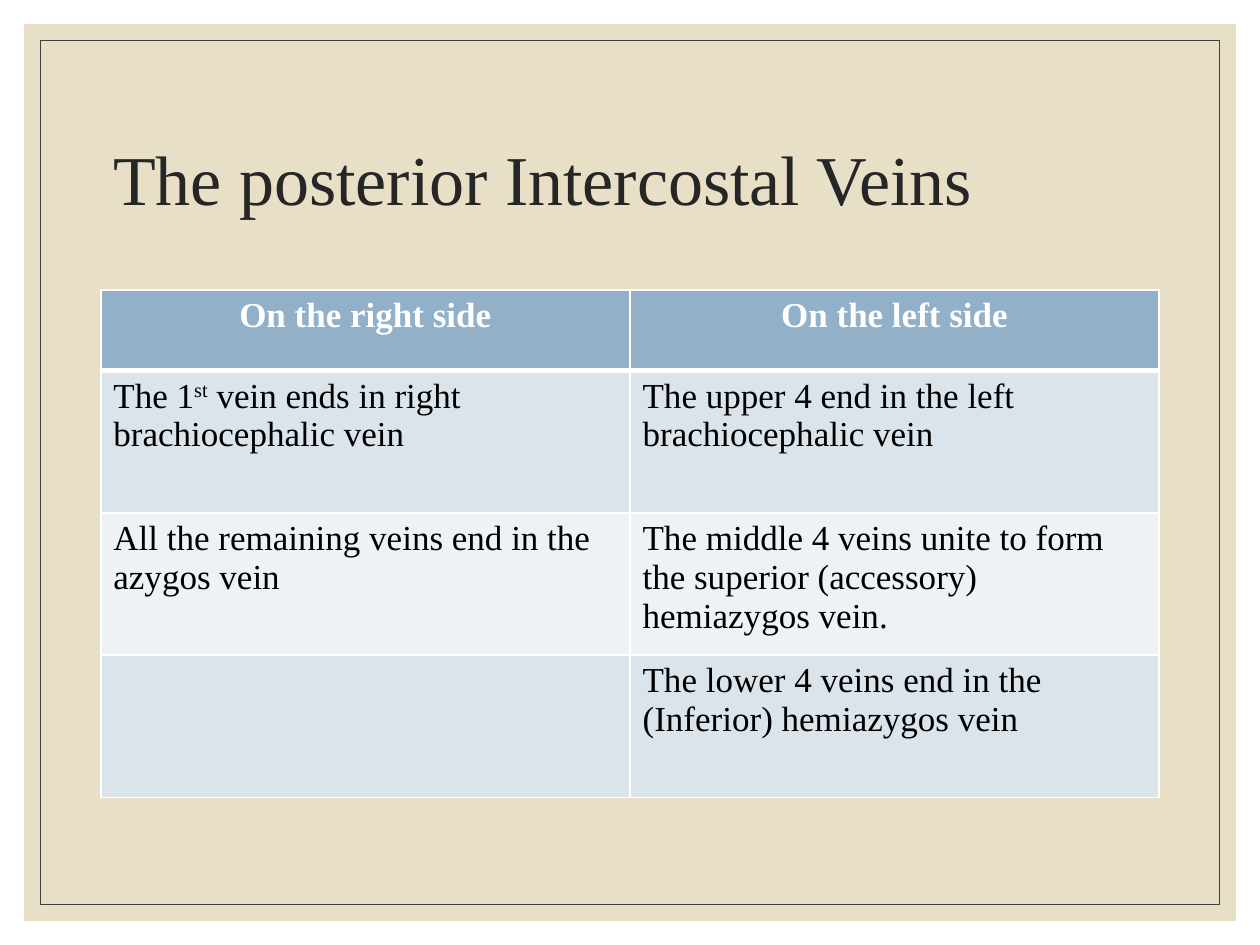
from lxml.etree import SubElement
from pptx import Presentation
from pptx.dml.color import RGBColor
from pptx.enum.shapes import MSO_SHAPE
from pptx.enum.text import MSO_ANCHOR, PP_ALIGN
from pptx.oxml.ns import qn
from pptx.util import Inches, Pt

WIDTH, HEIGHT = 10, 7.5
MARGIN = 0.08 * WIDTH
CONTENT_W = WIDTH - 2 * MARGIN
FONT = "Times New Roman"
HEADER_H, BODY_H = 0.64, 1.13
HEADER_FILL, BODY_FILLS = "92B0C8", ("DCE4EB", "EEF2F5")

# Each cell is a list of (text, is superscript) runs.
ROWS = [
    [[("On the right side", False)], [("On the left side", False)]],
    [[("The 1", False), ("st", True),
      (" vein ends in right brachiocephalic vein", False)],
     [("The upper 4 end in the left brachiocephalic vein", False)]],
    [[("All the remaining veins end in the azygos vein", False)],
     [("The middle 4 veins unite to form the superior (accessory) "
       "hemiazygos vein.", False)]],
    [[], [("The lower 4 veins end in the (Inferior) hemiazygos vein", False)]],
]


def rgb(color):
    return RGBColor.from_string(color)


def set_attrs(obj, **values):
    for name, value in values.items():
        setattr(obj, name, value)


def add_run(p, text, size, color, bold=False, superscript=False):
    r = p.add_run()
    r.text = text
    set_attrs(r.font, name=FONT, size=Pt(size), bold=bold)
    r.font.color.rgb = rgb(color)
    if superscript:
        r._r.get_or_add_rPr().set("baseline", "30000")


def add_frame(slide, inset, fill=None, line=None):
    """Add a rectangle set in from every slide edge by the same distance."""
    sp = slide.shapes.add_shape(
        MSO_SHAPE.RECTANGLE, Inches(inset), Inches(inset),
        Inches(WIDTH - 2 * inset), Inches(HEIGHT - 2 * inset))
    sp.shadow.inherit = False
    if fill:
        sp.fill.solid()
        sp.fill.fore_color.rgb = rgb(fill)
    else:
        sp.fill.background()
    if line:
        sp.line.color.rgb = rgb(line)
        sp.line.width = Pt(0.5)
    else:
        sp.line.fill.background()


def add_title(slide, text):
    box = slide.shapes.add_textbox(
        Inches(MARGIN), Inches(0.7), Inches(CONTENT_W), Inches(1.5))
    tf = box.text_frame
    set_attrs(tf, word_wrap=True, vertical_anchor=MSO_ANCHOR.MIDDLE)
    p = tf.paragraphs[0]
    p.line_spacing = 0.9
    add_run(p, text, 40, "262626")


def set_borders(cell, **widths):
    """Draw white borders; widths maps L, R, T, B to points."""
    tc_pr = cell._tc.get_or_add_tcPr()
    for side, width in widths.items():
        ln = SubElement(tc_pr, qn(f"a:ln{side}"), w=str(Pt(width)))
        fill = SubElement(ln, qn("a:solidFill"))
        SubElement(fill, qn("a:srgbClr"), val="FFFFFF")


def add_vein_table(slide, rows):
    heights = [HEADER_H] + [BODY_H] * (len(rows) - 1)
    table = slide.shapes.add_table(
        len(rows), len(rows[0]), Inches(MARGIN), Inches(2.3),
        Inches(CONTENT_W), Inches(sum(heights))).table
    for i, (row, height) in enumerate(zip(rows, heights)):
        header = i == 0
        table.rows[i].height = Inches(height)
        for j, runs in enumerate(row):
            cell = table.cell(i, j)
            set_borders(cell, L=1, R=1, T=3 if i == 1 else 1,
                        B=3 if header else 1)
            cell.fill.solid()
            cell.fill.fore_color.rgb = rgb(
                HEADER_FILL if header else BODY_FILLS[(i - 1) % 2])
            p = cell.text_frame.paragraphs[0]
            p.alignment = PP_ALIGN.CENTER if header else PP_ALIGN.LEFT
            for text, superscript in runs:
                add_run(p, text, 20, "FFFFFF" if header else "000000",
                        header, superscript)


def main():
    prs = Presentation()
    set_attrs(prs, slide_width=Inches(WIDTH), slide_height=Inches(HEIGHT))
    slide = prs.slides.add_slide(prs.slide_layouts[6])
    add_frame(slide, 0.19, fill="E7E0C7")
    add_frame(slide, 0.32, line="404040")
    add_title(slide, "The posterior Intercostal Veins")
    add_vein_table(slide, ROWS)
    prs.save("out.pptx")


if __name__ == "__main__":
    main()
